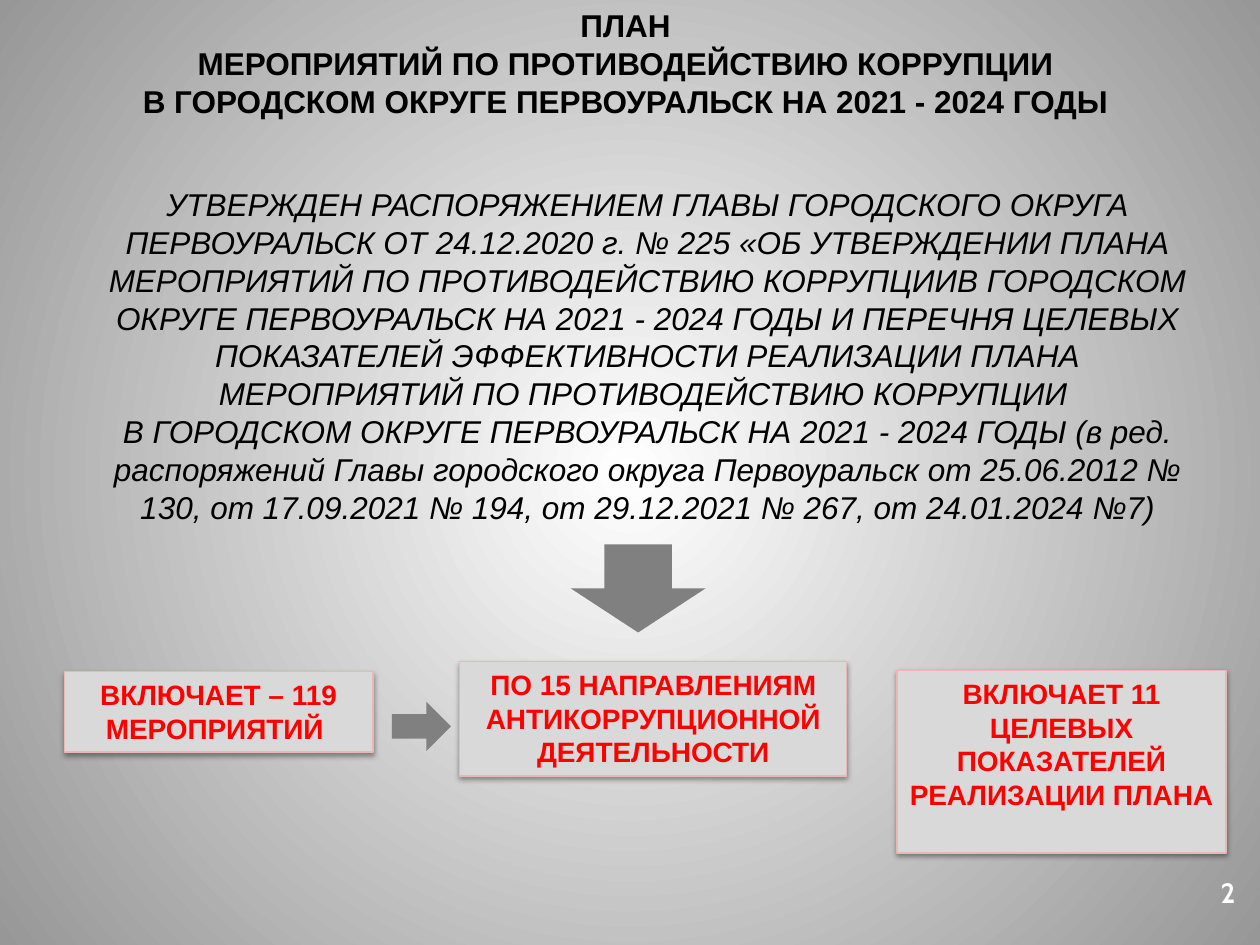
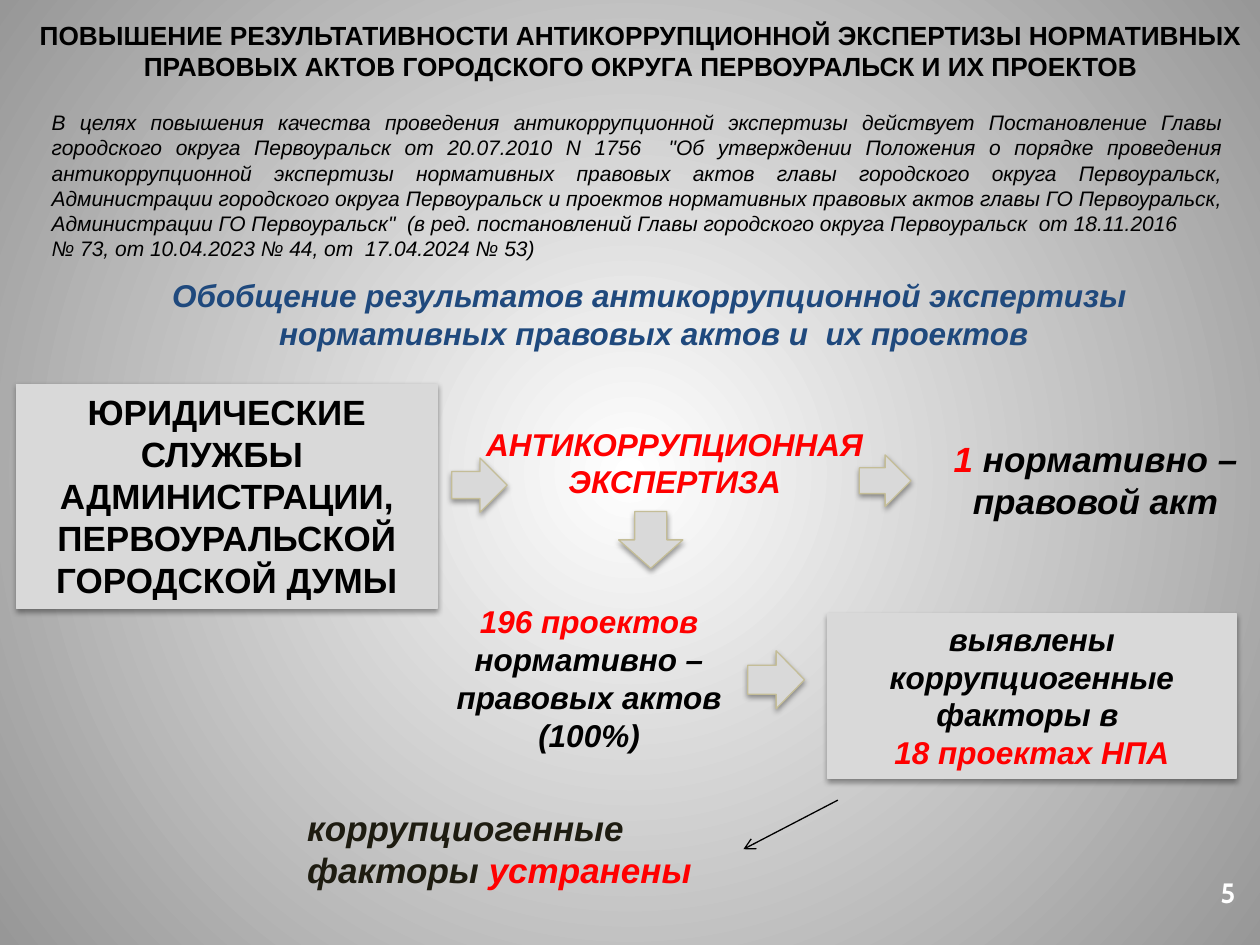
from pptx import Presentation
from pptx.dml.color import RGBColor
from pptx.enum.shapes import MSO_CONNECTOR, MSO_SHAPE
from pptx.enum.text import MSO_ANCHOR, MSO_AUTO_SIZE, PP_ALIGN
from pptx.oxml import parse_xml
from pptx.oxml.ns import nsdecls
from pptx.util import Inches, Pt

BLACK, WHITE, RED, BLUE, DARK = "000000", "FFFFFF", "FF0000", "1F497D", "1E1C11"
PANEL, ARROW, ROSE, SAND, BACKDROP = "D9D9D9", "808080", "E6B9B8", "C4BD97", "979797"
colour = RGBColor.from_string

deck = Presentation()
deck.slide_width, deck.slide_height = Inches(10), Inches(7.5)
COLUMN, ROW = deck.slide_width / 100, deck.slide_height / 75


def cells(left, top, width, height):
    """Turn a box on the grid of 100 columns by 75 rows into slide lengths."""
    return [int(n * unit) for n, unit in zip((left, top, width, height), (COLUMN, ROW) * 2)]


def write(shape, size, paragraphs, style="b", align=PP_ALIGN.CENTER, font="Arial"):
    """Fill a shape; a paragraph is a list of (text, colour), style holds b and/or i."""
    frame = shape.text_frame
    frame.word_wrap = True
    frame.auto_size = MSO_AUTO_SIZE.NONE
    frame.vertical_anchor = MSO_ANCHOR.TOP
    for index, pieces in enumerate(paragraphs):
        paragraph = frame.add_paragraph() if index else frame.paragraphs[0]
        paragraph.alignment = align
        paragraph.space_before = Pt(0)
        for text, shade in pieces:
            run = paragraph.add_run()
            run.text = text
            run.font.name, run.font.size = font, Pt(size)
            run.font.bold, run.font.italic = "b" in style, "i" in style
            run.font.color.rgb = colour(shade)


# Shared background: white centre fading to grey
master = deck.slide_master
backdrop = master.background.fill
backdrop.gradient()
for stop, shade in zip(backdrop.gradient_stops, (WHITE, BACKDROP)):
    stop.color.rgb = colour(shade)
linear = master.element.xpath(".//p:bg//a:lin")[0]
linear.getparent().replace(linear, parse_xml(
    f'<a:path {nsdecls("a")} path="circle">'
    '<a:fillToRect l="50000" t="50000" r="50000" b="50000"/></a:path>'))

# Number, title (box, size, lines), body (box, size, alignment, lines)
pages = [
    ("2",
     ((5.1, 0, 89.1, 10.1), 18, [
         "ПЛАН",
         "МЕРОПРИЯТИЙ ПО ПРОТИВОДЕЙСТВИЮ КОРРУПЦИИ",
         "В ГОРОДСКОМ ОКРУГЕ ПЕРВОУРАЛЬСК НА 2021 - 2024 ГОДЫ"]),
     ((6.8, 14.2, 89.2, 28.3), 18, PP_ALIGN.CENTER, [
         "УТВЕРЖДЕН РАСПОРЯЖЕНИЕМ ГЛАВЫ ГОРОДСКОГО ОКРУГА ПЕРВОУРАЛЬСК ОТ 24.12.2020 г. "
         "№ 225 «ОБ УТВЕРЖДЕНИИ ПЛАНА МЕРОПРИЯТИЙ ПО ПРОТИВОДЕЙСТВИЮ КОРРУПЦИИВ ГОРОДСКОМ "
         "ОКРУГЕ ПЕРВОУРАЛЬСК НА 2021 - 2024 ГОДЫ И ПЕРЕЧНЯ ЦЕЛЕВЫХ ПОКАЗАТЕЛЕЙ "
         "ЭФФЕКТИВНОСТИ РЕАЛИЗАЦИИ ПЛАНА МЕРОПРИЯТИЙ ПО ПРОТИВОДЕЙСТВИЮ КОРРУПЦИИ ",
         "В ГОРОДСКОМ ОКРУГЕ ПЕРВОУРАЛЬСК НА 2021 - 2024 ГОДЫ (в ред. распоряжений Главы "
         "городского округа Первоуральск от 25.06.2012 № 130, от 17.09.2021 № 194, "
         "от 29.12.2021 № 267, от 24.01.2024 №7)"])),
    ("5",
     ((1.7, 1, 98.3, 6.1), 15, [
         "ПОВЫШЕНИЕ РЕЗУЛЬТАТИВНОСТИ АНТИКОРРУПЦИОННОЙ ЭКСПЕРТИЗЫ НОРМАТИВНЫХ ПРАВОВЫХ "
         "АКТОВ ГОРОДСКОГО ОКРУГА ПЕРВОУРАЛЬСК И ИХ ПРОЕКТОВ"]),
     ((3.1, 8.2, 95, 13.1), 12, PP_ALIGN.JUSTIFY, [
         "В целях повышения качества проведения антикоррупционной экспертизы действует "
         "Постановление Главы городского округа Первоуральск от 20.07.2010 N 1756  "
         "\"Об утверждении Положения о порядке проведения антикоррупционной экспертизы "
         "нормативных правовых актов главы городского округа Первоуральск, Администрации "
         "городского округа Первоуральск и проектов нормативных правовых актов главы ГО "
         "Первоуральск, Администрации ГО Первоуральск\"  (в ред. постановлений Главы "
         "городского округа Первоуральск  от 18.11.2016 ",
         "№ 73, от 10.04.2023 № 44, от  17.04.2024 № 53) "])),
]
for number, (title_box, title_size, title_lines), (body_box, body_size, align, body_lines) in pages:
    slide = deck.slides.add_slide(deck.slide_layouts[1])
    title, body = slide.placeholders
    title.left, title.top, title.width, title.height = cells(*title_box)
    write(title, title_size, [[(line, BLACK)] for line in title_lines])
    body.left, body.top, body.width, body.height = cells(*body_box)
    write(body, body_size, [[(line, BLACK)] for line in body_lines], "i", align)
    for paragraph in body.text_frame.paragraphs:
        properties = paragraph._p.get_or_add_pPr()
        properties.set("marL", "0")
        properties.set("indent", "0")
        properties.append(parse_xml(f'<a:buNone {nsdecls("a")}/>'))
    page_number = slide.shapes.add_textbox(*cells(94.9, 69, 5.1, 3.7))
    write(page_number, 16, [[(number, WHITE)]], font="Cabin")

plan, review = deck.slides

# Panels: slide, box, edge, text size, style, paragraphs
panels = [
    (plan, (5.1, 53.3, 24.5, 6.4), ROSE, 16, "b", [[("ВКЛЮЧАЕТ – 119 МЕРОПРИЯТИЙ ", RED)]]),
    (plan, (36.5, 52.5, 30.7, 9.1), ROSE, 16, "b",
     [[("ПО 15 НАПРАВЛЕНИЯМ АНТИКОРРУПЦИОННОЙ ДЕЯТЕЛЬНОСТИ", RED)]]),
    (plan, (71.2, 53.2, 26.1, 14.5), ROSE, 16, "b",
     [[("ВКЛЮЧАЕТ 11 ЦЕЛЕВЫХ ПОКАЗАТЕЛЕЙ РЕАЛИЗАЦИИ ПЛАНА", RED)]]),
    (review, (65.7, 48.7, 32.4, 13.1), PANEL, 18, "bi",
     [[("выявлены коррупциогенные факторы в ", BLACK)], [("18 проектах НПА", RED)]]),
    (review, (1.3, 30.5, 33.4, 17.8), PANEL, 20, "b",
     [[("ЮРИДИЧЕСКИЕ СЛУЖБЫ  АДМИНИСТРАЦИИ, ПЕРВОУРАЛЬСКОЙ ГОРОДСКОЙ ДУМЫ", BLACK)]]),
]
raised = []
for slide, box, edge, size, style, paragraphs in panels:
    panel = slide.shapes.add_shape(MSO_SHAPE.RECTANGLE, *cells(*box))
    write(panel, size, paragraphs, style)
    raised.append((panel, edge))

# Flat arrows between the parts of the plan
for direction, box in [(MSO_SHAPE.DOWN_ARROW, (45.3, 43.2, 10.7, 7)),
                       (MSO_SHAPE.RIGHT_ARROW, (31.1, 55.7, 4.7, 3.9))]:
    arrow = plan.shapes.add_shape(direction, *cells(*box))
    arrow.fill.solid()
    arrow.fill.fore_color.rgb = colour(ARROW)
    arrow.line.fill.background()
    arrow.shadow.inherit = False

# Raised arrows between the stages of the review
for turn, box in [(0, (49.1, 40.6, 5.1, 4.5)), (270, (35.9, 36.3, 4.3, 4.4)),
                  (270, (68.2, 36.1, 4.1, 4.1)), (270, (59.3, 51.7, 4.6, 4.5))]:
    arrow = review.shapes.add_shape(MSO_SHAPE.DOWN_ARROW, *cells(*box))
    arrow.rotation = turn
    raised.append((arrow, SAND))

for shape, edge in raised:
    shape.fill.solid()
    shape.fill.fore_color.rgb = colour(PANEL)
    shape.line.color.rgb = colour(edge)
    shape.line.width = Pt(0.75)
    shape.shadow.inherit = False
    shape.element.xpath(".//a:effectLst")[0].append(parse_xml(
        f'<a:outerShdw {nsdecls("a")} blurRad="40000" dist="20000" dir="5400000" '
        f'rotWithShape="0"><a:srgbClr val="{BLACK}"><a:alpha val="38000"/></a:srgbClr>'
        '</a:outerShdw>'))

# Captions of the review: box, size, alignment, paragraphs
captions = [
    ((5.4, 21.4, 93, 7.1), 18, PP_ALIGN.CENTER,
     [[("Обобщение результатов антикоррупционной экспертизы ", BLUE)],
      [("нормативных правовых актов и  их проектов", BLUE)]]),
    ((37.1, 33.2, 32.9, 7.1), 18, PP_ALIGN.CENTER, [[("АНТИКОРРУПЦИОННАЯ ЭКСПЕРТИЗА", RED)]]),
    ((74.4, 34.2, 25.1, 7.7), 20, PP_ALIGN.CENTER,
     [[("1 ", RED), ("нормативно – правовой акт", BLACK)]]),
    ((34.7, 47.3, 24.1, 13.1), 18, PP_ALIGN.CENTER,
     [[("196 проектов ", RED), ("нормативно – правовых актов (100%)", BLACK)]]),
    ((23.4, 63.5, 35.3, 7.7), 20, PP_ALIGN.LEFT,
     [[("коррупциогенные факторы ", DARK), ("устранены", RED)]]),
]
for box, size, align, paragraphs in captions:
    write(review.shapes.add_textbox(*cells(*box)), size, paragraphs, "bi", align)

outcome = review.shapes.add_connector(MSO_CONNECTOR.STRAIGHT, *cells(66.5, 63.5, 59, 67.4))
outcome.line.color.rgb = colour(BLACK)
outcome.line.width = Pt(0.75)
outcome.element.xpath(".//a:ln")[0].append(parse_xml(f'<a:tailEnd {nsdecls("a")} type="arrow"/>'))
outcome.element.spPr.append(parse_xml(f'<a:effectLst {nsdecls("a")}/>'))

deck.save("out.pptx")
